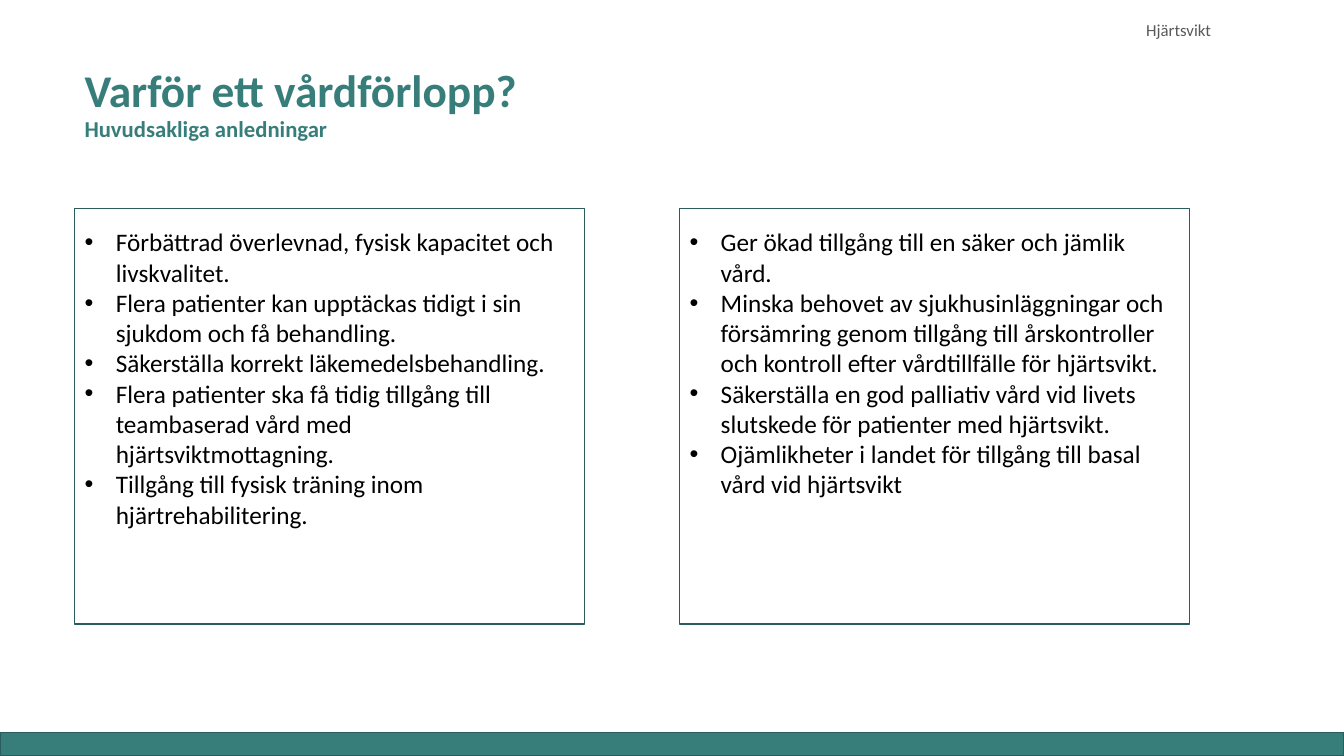
from dataclasses import dataclass

from lxml import etree
from pptx import Presentation
from pptx.dml import color
from pptx.enum import shapes, text
from pptx.oxml import ns
from pptx.slide import Slide
from pptx.util import Inches, Pt


@dataclass(frozen=True)
class Theme:
    font: str = "Calibri"
    teal: str = "377D7A"
    dark_teal: str = "295C5A"
    black: str = "000000"
    grey: str = "595959"
    title_size: float = 32.4
    subtitle_size: float = 16.2
    body_size: float = 18
    header_size: float = 12
    outline_width: float = 1


THEME = Theme()


@dataclass(frozen=True)
class Box:
    left: float
    top: float
    width: float
    height: float

    def lengths(self) -> tuple:
        return tuple(Inches(value) for value in (self.left, self.top, self.width, self.height))


@dataclass(frozen=True)
class Line:
    wording: str
    size: float
    ink: str = THEME.black
    bold: bool = False


@dataclass(frozen=True)
class TextBlock:
    box: Box
    paragraphs: tuple[tuple[Line, ...], ...]
    spacing: float | None = None
    bulleted: bool = False
    anchor: text.MSO_ANCHOR = text.MSO_ANCHOR.TOP


@dataclass(frozen=True)
class Panel:
    left: float
    reasons: tuple[str, ...]


PANEL_TOP, PANEL_WIDTH, PANEL_HEIGHT = 2.07, 5.06, 4.12
BULLET_INDENT = 0.31

PANELS = (
    Panel(0.74, (
        "Förbättrad överlevnad, fysisk kapacitet och livskvalitet.",
        "Flera patienter kan upptäckas tidigt i sin sjukdom och få behandling.",
        "Säkerställa korrekt läkemedelsbehandling.",
        "Flera patienter ska få tidig tillgång till teambaserad vård med hjärtsviktmottagning.",
        "Tillgång till fysisk träning inom hjärtrehabilitering.",
    )),
    Panel(6.74, (
        "Ger ökad tillgång till en säker och jämlik vård.",
        "Minska behovet av sjukhusinläggningar och försämring genom tillgång till "
        "årskontroller och kontroll efter vårdtillfälle för hjärtsvikt.",
        "Säkerställa en god palliativ vård vid livets slutskede för patienter med hjärtsvikt.",
        "Ojämlikheter i landet för tillgång till basal vård vid hjärtsvikt",
    )),
)

TEXT_BLOCKS = (
    TextBlock(
        Box(0.74, 0.79, 10, 0.67),
        ((
            Line("Varför ett vårdförlopp?", THEME.title_size, THEME.teal, True),
            Line("Huvudsakliga anledningar", THEME.subtitle_size, THEME.teal, True),
        ),),
        spacing=0.9,
        anchor=text.MSO_ANCHOR.BOTTOM,
    ),
    TextBlock(
        Box(11.27, 0.15, 1.7, 0.3),
        ((Line("Hjärtsvikt", THEME.header_size, THEME.grey),),),
    ),
)


def rgb(value: str) -> color.RGBColor:
    return color.RGBColor.from_string(value)


def add_bullet(paragraph) -> None:
    properties = paragraph._p.get_or_add_pPr()
    indent = Inches(BULLET_INDENT)
    properties.set("marL", str(indent))
    properties.set("indent", str(-indent))
    etree.SubElement(properties, ns.qn("a:buFont")).set("typeface", "Arial")
    etree.SubElement(properties, ns.qn("a:buChar")).set("char", "•")


def draw_text(slide: Slide, block: TextBlock) -> None:
    frame = slide.shapes.add_textbox(*block.box.lengths()).text_frame
    frame.word_wrap = True
    frame.vertical_anchor = block.anchor
    for index, lines in enumerate(block.paragraphs):
        paragraph = frame.add_paragraph() if index else frame.paragraphs[0]
        if block.spacing:
            paragraph.line_spacing = block.spacing
        if block.bulleted:
            add_bullet(paragraph)
        for position, line in enumerate(lines):
            if position:
                paragraph.add_line_break()
            run = paragraph.add_run()
            run.text = line.wording
            formats = {"name": THEME.font, "size": Pt(line.size), "bold": line.bold}
            for attribute, value in formats.items():
                setattr(run.font, attribute, value)
            run.font.color.rgb = rgb(line.ink)


def draw_rectangle(slide: Slide, box: Box, fill: str | None = None) -> None:
    shape = slide.shapes.add_shape(shapes.MSO_SHAPE.RECTANGLE, *box.lengths())
    shape.shadow.inherit = False
    if fill:
        shape.fill.solid()
        shape.fill.fore_color.rgb = rgb(fill)
    else:
        shape.fill.background()
    shape.line.color.rgb = rgb(THEME.dark_teal)
    shape.line.width = Pt(THEME.outline_width)


def draw_panel(slide: Slide, panel: Panel) -> None:
    draw_rectangle(slide, Box(panel.left, PANEL_TOP, PANEL_WIDTH, PANEL_HEIGHT))
    draw_text(slide, TextBlock(
        Box(panel.left, 2.2, 4.98, 3.85),
        tuple((Line(reason, THEME.body_size),) for reason in panel.reasons),
        bulleted=True,
    ))


def main() -> None:
    presentation = Presentation()
    presentation.slide_width = Inches(13.33)
    presentation.slide_height = Inches(7.5)
    slide = presentation.slides.add_slide(presentation.slide_layouts[6])
    draw_rectangle(slide, Box(0, 7.27, 13.33, 0.23), THEME.teal)
    for block in TEXT_BLOCKS:
        draw_text(slide, block)
    for panel in PANELS:
        draw_panel(slide, panel)
    presentation.save("out.pptx")


if __name__ == "__main__":
    main()
